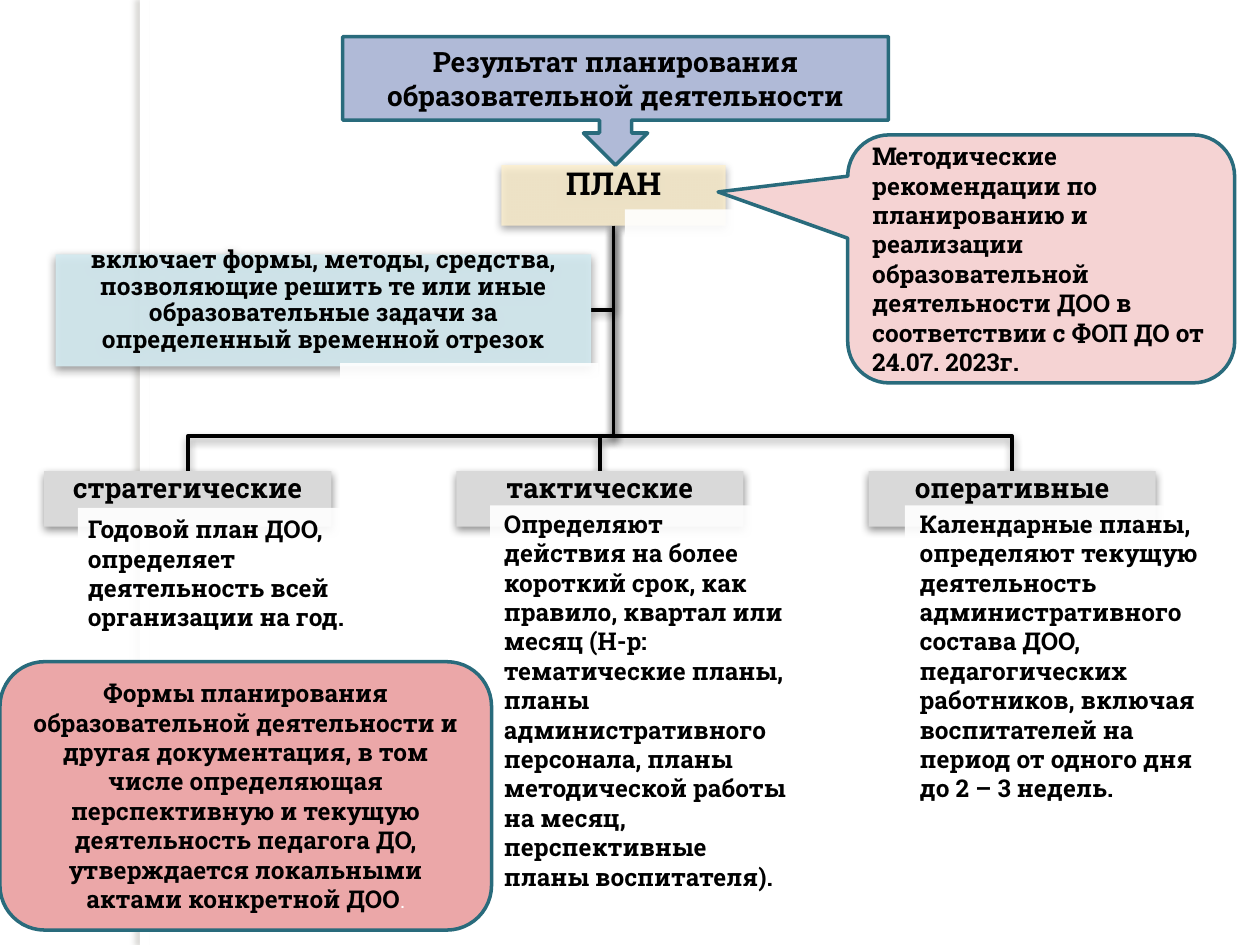
from lxml.etree import SubElement
from pptx import Presentation
from pptx.dml.color import RGBColor
from pptx.enum.shapes import MSO_SHAPE as Preset
from pptx.enum.text import MSO_ANCHOR as Anchor, PP_ALIGN as Align
from pptx.oxml.ns import qn
from pptx.util import Cm, Pt

FONT = "Roboto Slab"
BLACK, WHITE, TEAL, GREY = "000000", "FFFFFF", "296B7C", "D9D9D9"
BOX_SHADOW = (BLACK, 43, 5, 2, 90)  # colour, opacity, blur, distance, angle
LABEL_FORMAT = dict(margin_left=Cm(0.03), margin_top=Cm(0.03),
                    margin_right=Cm(0.03), margin_bottom=Cm(0.43))

TRUNK_X, PLAN_BOTTOM, SCOPE_Y, BUS_Y = 12.37, 4.55, 6.25, 8.79
LEVEL_LEFT, LEVEL_STEP, LEVEL_TOP, LEVEL_WIDTH = 0.89, 8.31, 9.5, 5.79
LEVELS = [  # title, cover position, note area, note text
    ("стратегические", (1.57, 10.24), (1.52, 10.24, 6.38, 2.64),
     "Годовой план ДОО, определяет деятельность всей организации на год."),
    ("тактические", (9.88, 10.19), (9.91, 10.13, 6.2, 8.03),
     "Определяют действия на более короткий срок, как правило, квартал или "
     "месяц (Н-р: тематические планы, планы административного персонала, планы "
     "методической работы на месяц, перспективные планы воспитателя)."),
    ("оперативные", (18.24, 10.19), (18.29, 10.13, 6.2, 7.44),
     "Календарные планы, определяют текущую деятельность административного "
     "состава ДОО, педагогических работников, включая воспитателей на период "
     "от одного дня до 2 – 3 недель."),
]


def color(hex_text):
    return RGBColor.from_string(hex_text)


def set_format(target, values):
    for name, value in values.items():
        setattr(target, name, value)


def set_alpha(parent, percent):
    SubElement(parent, qn("a:alpha"), val=str(percent * 1000))


def set_shadow(shape, shadow):
    shape.shadow.inherit = False
    if not shadow:
        return
    tint, opacity, blur, distance, angle = shadow
    effects = shape._element.spPr.find(qn("a:effectLst"))
    outer = SubElement(effects, qn("a:outerShdw"), blurRad=str(Pt(blur)),
                       dist=str(Pt(distance)), dir=str(angle * 60000),
                       algn="ctr", rotWithShape="0")
    set_alpha(SubElement(outer, qn("a:srgbClr"), val=tint), opacity)


def add_span(para, text, size, tint=BLACK, bold=True):
    span = para.add_run()
    span.text = text
    set_format(span.font, dict(name=FONT, size=Pt(size), bold=bold))
    span.font.color.rgb = color(tint)


def write(shape, text, size, align=Align.CENTER, anchor=Anchor.MIDDLE, spacing=1.0):
    frame = shape.text_frame
    set_format(frame, dict(word_wrap=True, vertical_anchor=anchor))
    para = frame.paragraphs[0]
    set_format(para, dict(alignment=align, line_spacing=spacing))
    add_span(para, text, size)
    return para


def add_box(page, area, fill, alpha=100, line=None, shadow=None, preset=Preset.RECTANGLE):
    box = page.shapes.add_shape(preset, *map(Cm, area))
    box.fill.solid()
    box.fill.fore_color.rgb = color(fill)
    if alpha < 100:
        set_alpha(box._element.spPr.find(qn("a:solidFill"))[0], alpha)
    if line:
        box.line.color.rgb = color(line)
        box.line.width = Pt(2)
    else:
        box.line.fill.background()
    set_shadow(box, shadow)
    return box


def add_label(page, area, fill, text, size, alpha=100):
    box = add_box(page, area, fill, alpha, shadow=BOX_SHADOW)
    set_format(box.text_frame, LABEL_FORMAT)
    write(box, text, size, spacing=0.9)


def add_cover(page, area):
    add_box(page, area, WHITE, alpha=90)


def add_note(page, area, text):
    box = page.shapes.add_textbox(*map(Cm, area))
    write(box, text, 14, Align.LEFT, Anchor.TOP)


def add_branch(page, *points):
    start, *rest = [(Cm(x), Cm(y)) for x, y in points]
    builder = page.shapes.build_freeform(*start)
    builder.add_line_segments(rest, close=False)
    branch = builder.convert_to_shape()
    branch.fill.background()
    branch.line.color.rgb = color(BLACK)
    branch.line.width = Pt(2)
    set_shadow(branch, BOX_SHADOW)


def add_tree(page):
    # Branches
    root = (TRUNK_X, PLAN_BOTTOM)
    add_branch(page, root, (TRUNK_X, SCOPE_Y), (11.92, SCOPE_Y))
    lefts = [LEVEL_LEFT + i * LEVEL_STEP for i in range(len(LEVELS))]
    for left in lefts:
        middle = left + LEVEL_WIDTH / 2
        add_branch(page, root, (TRUNK_X, BUS_Y), (middle, BUS_Y), (middle, LEVEL_TOP))

    # Root and the three planning levels
    add_label(page, (10.11, 3.33, 4.52, 1.22), "FFF1CE", "ПЛАН", 18, alpha=80)
    add_cover(page, (12.6, 4.22, 2.95, 0.64))
    for left, (title, cover, _, _) in zip(lefts, LEVELS):
        add_label(page, (left, LEVEL_TOP, LEVEL_WIDTH, 1.12), GREY, title, 16)
        add_cover(page, (*cover, 6.27, 7.44))

    # What the plan includes
    add_label(page, (1.12, 5.13, 10.8, 2.26), "D4EBF1",
              "включает формы, методы, средства, позволяющие решить те или иные "
              "образовательные задачи за определенный временной отрезок", 14, alpha=90)
    add_cover(page, (6.86, 7.32, 5.21, 0.46))


def add_callouts(page):
    heading = add_box(page, (6.91, 0.74, 11, 2.59), "B0BAD7", line=TEAL,
                      preset=Preset.DOWN_ARROW_CALLOUT)
    write(heading, "Результат планирования образовательной деятельности", 16)

    for _, _, area, text in LEVELS:
        add_note(page, area, text)

    advice = add_box(page, (17.09, 2.72, 7.8, 5), "F5D3D3", line=TEAL,
                     preset=Preset.ROUNDED_RECTANGULAR_CALLOUT)
    advice.adjustments[0] = -0.835
    advice.adjustments[1] = -0.27
    write(advice, "Методические рекомендации по планированию и реализации "
          "образовательной деятельности ДОО в соответствии с ФОП ДО от "
          "24.07. 2023г.", 14, Align.LEFT)

    forms = add_box(page, (0, 13.34, 9.91, 5.41), "EBA7A8", line=TEAL,
                    preset=Preset.ROUNDED_RECTANGLE)
    para = write(forms, "Формы планирования образовательной деятельности и другая "
                 "документация, в том числе определяющая перспективную и текущую "
                 "деятельность педагога ДО, утверждается локальными актами "
                 "конкретной ДОО", 14)
    add_span(para, ".", 12, WHITE, bold=False)


def main():
    deck = Presentation()
    set_format(deck, dict(slide_width=Cm(25.4), slide_height=Cm(19.05)))
    page = deck.slides.add_slide(deck.slide_layouts[6])
    # Side strip
    add_box(page, (2.82, 0, 0.2, 19.05), WHITE, shadow=("736F63", 25, 3, 3, 180))
    add_tree(page)
    add_callouts(page)
    deck.save("out.pptx")


if __name__ == "__main__":
    main()
